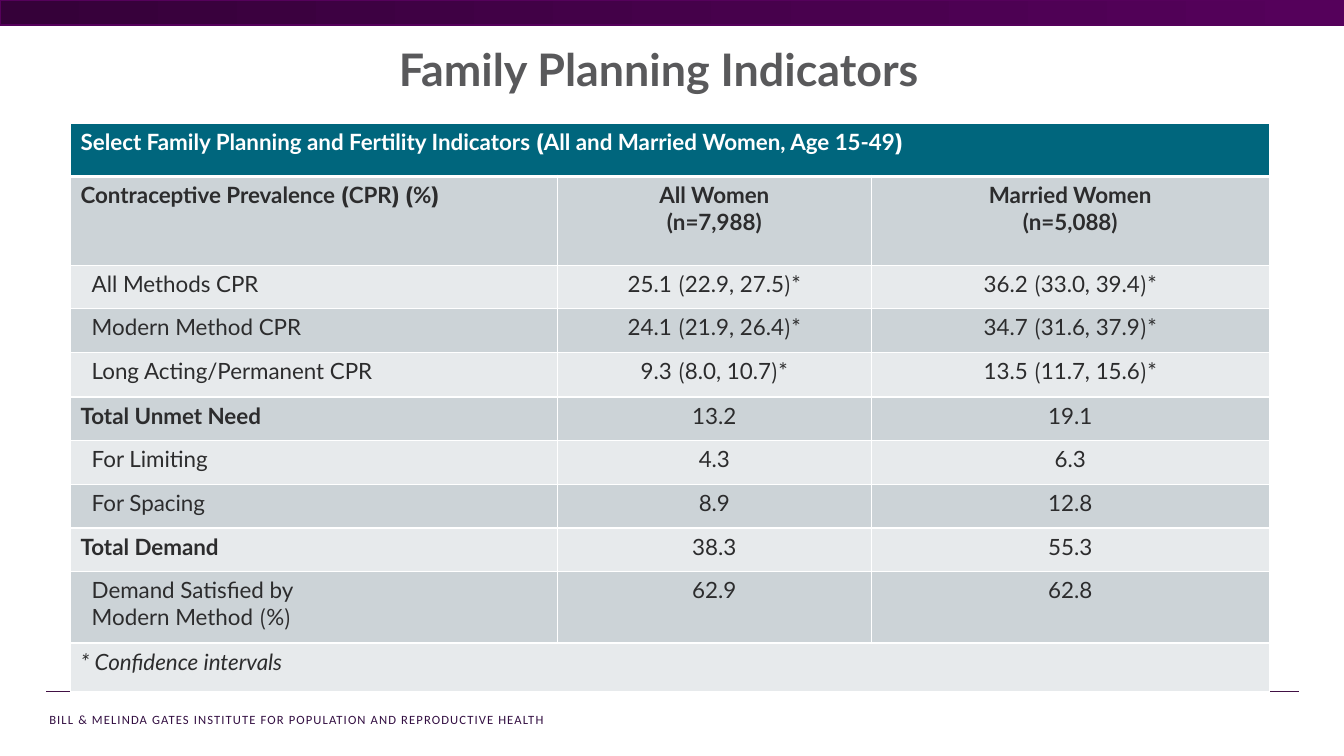
"""Build the family planning indicators slide."""
from dataclasses import dataclass
from itertools import groupby

import lxml.etree
import pptx
import pptx.dml.color
import pptx.enum.shapes
import pptx.enum.text
import pptx.oxml.ns
import pptx.util

Inches = pptx.util.Inches
Pt = pptx.util.Pt
RGBColor = pptx.dml.color.RGBColor
Align = pptx.enum.text.PP_ALIGN
qn = pptx.oxml.ns.qn

WHITE = RGBColor(0xFF, 0xFF, 0xFF)
GRAY = RGBColor(0x59, 0x59, 0x5B)
INK = RGBColor(0x2C, 0x2C, 0x2D)
TEAL = RGBColor(0x00, 0x66, 0x7D)
DARK = RGBColor(0xCC, 0xD3, 0xD7)
PALE = RGBColor(0xE7, 0xEA, 0xEC)
PLUM = RGBColor(0x33, 0x0F, 0x42)
RULE = RGBColor(0x41, 0x10, 0x44)
DEEP = RGBColor(0x35, 0x01, 0x39)
GRAPE = RGBColor(0x55, 0x01, 0x5B)
COLS = (4.83, 3.11, 3.95)


@dataclass
class Row:
    high: float
    texts: tuple[str, ...]
    indent: bool = False
    bold: tuple[bool, bool] = (False, False)
    slant: bool = False


ROWS = [
    Row(0.53, ("Select Family Planning and Fertility Indicators (All and Married Women, Age 15-49)",),
        bold=(True, True)),
    Row(0.88, ("Contraceptive Prevalence (CPR) (%)", "All Women\n(n=7,988)", "Married Women\n(n=5,088)"),
        bold=(True, True)),
    Row(0.43, ("All Methods CPR", "25.1 (22.9, 27.5)*", "36.2 (33.0, 39.4)*"), indent=True),
    Row(0.44, ("Modern Method CPR", "24.1 (21.9, 26.4)*", "34.7 (31.6, 37.9)*"), indent=True),
    Row(0.44, ("Long Acting/Permanent CPR", "9.3 (8.0, 10.7)*", "13.5 (11.7, 15.6)*"), indent=True),
    Row(0.43, ("Total Unmet Need", "13.2", "19.1"), bold=(True, False)),
    Row(0.44, ("For Limiting", "4.3", "6.3"), indent=True),
    Row(0.43, ("For Spacing", "8.9", "12.8"), indent=True),
    Row(0.43, ("Total Demand", "38.3", "55.3"), bold=(True, False)),
    Row(0.71, ("Demand Satisfied by\nModern Method (%)", "62.9", "62.8"), indent=True),
    Row(0.48, ("* Confidence intervals",), slant=True),
]


def add_run(para, text: str, size: float, color: RGBColor, face: str = "Lato",
            bold: bool = False, slant: bool = False):
    run = para.add_run()
    run.text = text
    font = run.font
    font.name, font.size, font.bold, font.italic = face, Pt(size), bold, slant
    font.color.rgb = color
    return run


def add_edge(cell, side: str, width: float) -> None:
    edge = lxml.etree.SubElement(cell._tc.get_or_add_tcPr(), qn(f"a:ln{side}"), w=str(Pt(width)))
    fill = lxml.etree.SubElement(edge, qn("a:solidFill"))
    lxml.etree.SubElement(fill, qn("a:srgbClr"), val=str(WHITE))


def fill_cell(cell, row: Row, text: str, col: int, color: RGBColor) -> None:
    if row.indent and col == 0:
        cell.margin_left = Inches(0.21)
    frame = cell.text_frame
    for index, line in enumerate(text.split("\n")):
        para = frame.add_paragraph() if index else frame.paragraphs[0]
        para.alignment = Align.CENTER if col else Align.LEFT
        for mark, group in groupby(line, lambda char: char in "()" and "n=" not in line):
            add_run(para, "".join(group), 16, color, "Montserrat" if mark else "Lato",
                    row.bold[min(col, 1)], row.slant)


def add_grid(slide) -> None:
    high = sum(row.high for row in ROWS)
    frame = slide.shapes.add_table(len(ROWS), len(COLS), Inches(0.7), Inches(1.22),
                                   Inches(sum(COLS)), Inches(high))
    table = frame.table
    table.first_row = table.horz_banding = False
    for col, wide in enumerate(COLS):
        table.columns[col].width = Inches(wide)
    for index, row in enumerate(ROWS):
        table.rows[index].height = Inches(row.high)
        shade = TEAL if index == 0 else DARK if index % 2 else PALE
        for col in range(len(COLS)):
            cell = table.cell(index, col)
            for side in "LRTB":
                thick = (index, side) in ((0, "B"), (1, "T"))
                add_edge(cell, side, 3 if thick else 1)
            cell.fill.solid()
            cell.fill.fore_color.rgb = shade
        if len(row.texts) == 1:
            table.cell(index, 0).merge(table.cell(index, len(COLS) - 1))
        for col, text in enumerate(row.texts):
            fill_cell(table.cell(index, col), row, text, col, INK if index else WHITE)


def add_frame(slide) -> None:
    box = slide.shapes.add_textbox(Inches(0.39), Inches(7.01), Inches(7.38), Inches(0.25))
    box.text_frame.word_wrap = True
    run = add_run(box.text_frame.paragraphs[0],
                  "BILL & MELINDA GATES INSTITUTE FOR POPULATION AND REPRODUCTIVE HEALTH",
                  9, PLUM, "Calibri")
    run._r.get_or_add_rPr().set("spc", "80")

    line = slide.shapes.add_connector(pptx.enum.shapes.MSO_CONNECTOR.STRAIGHT,
                                      Inches(12.88), Inches(6.86), Inches(0.46), Inches(6.86))
    line.line.color.rgb = RULE
    line.line.width = Pt(1.25)
    lxml.etree.SubElement(line._element.spPr, qn("a:effectLst"))

    bar = slide.shapes.add_shape(pptx.enum.shapes.MSO_SHAPE.RECTANGLE,
                                 0, 0, Inches(13.33), Inches(0.25))
    bar.shadow.inherit = False
    bar.fill.gradient()
    bar.fill.gradient_angle = 0
    for stop, place, color in zip(bar.fill.gradient_stops, (0, 1), (DEEP, GRAPE)):
        stop.position = place
        stop.color.rgb = color
    bar.line.color.rgb = GRAPE
    bar.line.width = Pt(1)


def add_title(slide) -> None:
    title = slide.shapes.title
    title.left, title.top = Inches(0.48), Inches(0.36)
    title.width, title.height = Inches(12.11), Inches(0.64)
    title.text_frame.vertical_anchor = pptx.enum.text.MSO_ANCHOR.MIDDLE
    para = title.text_frame.paragraphs[0]
    para.alignment = Align.CENTER
    add_run(para, "Family Planning Indicators", 32, GRAY, bold=True)


def main() -> None:
    deck = pptx.Presentation()
    deck.slide_width, deck.slide_height = Inches(13.33), Inches(7.5)
    slide = deck.slides.add_slide(deck.slide_layouts[5])
    add_frame(slide)
    add_title(slide)
    add_grid(slide)
    deck.save("out.pptx")


if __name__ == "__main__":
    main()
